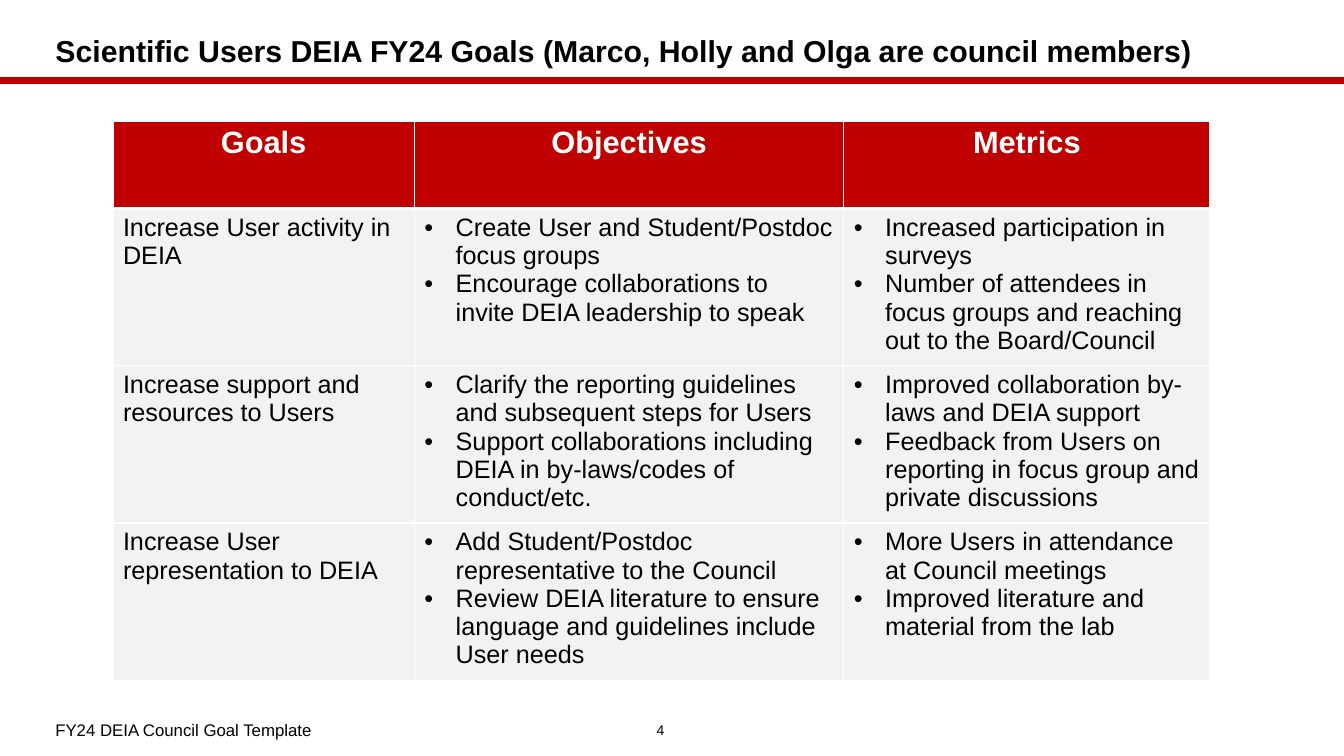
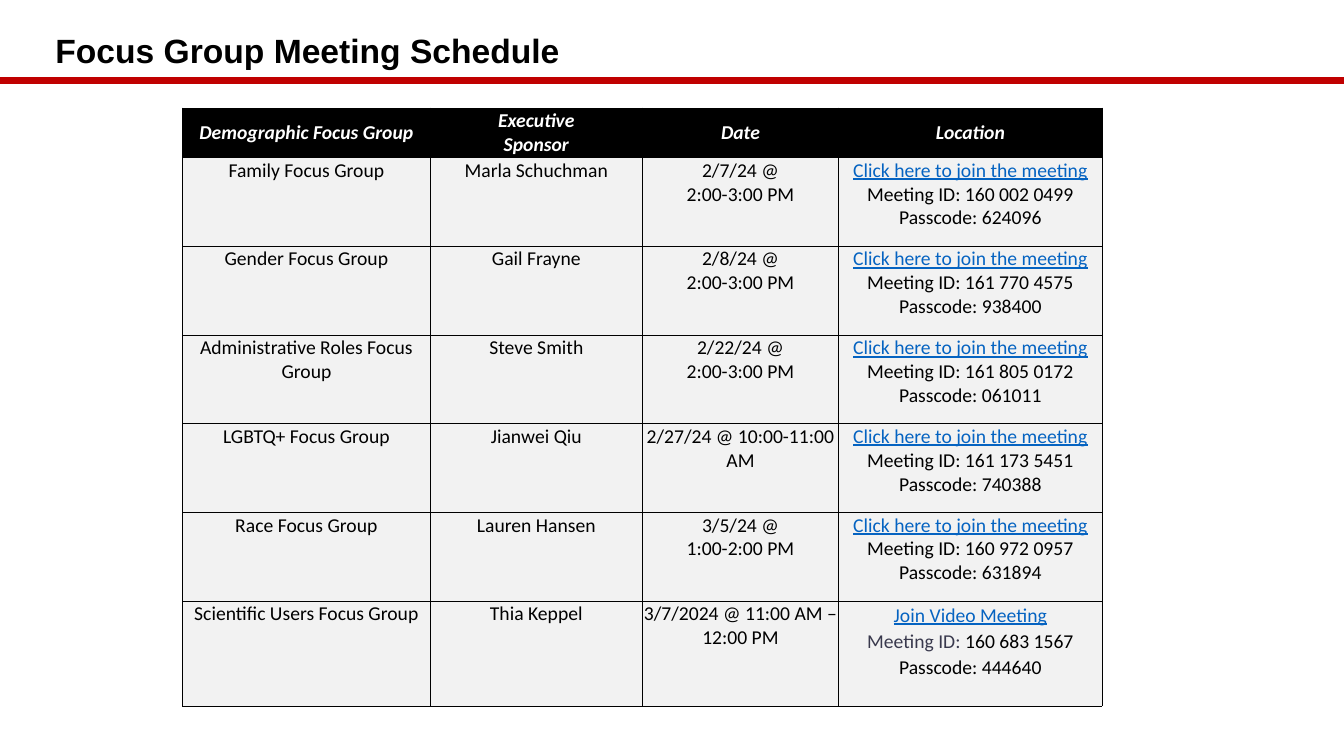
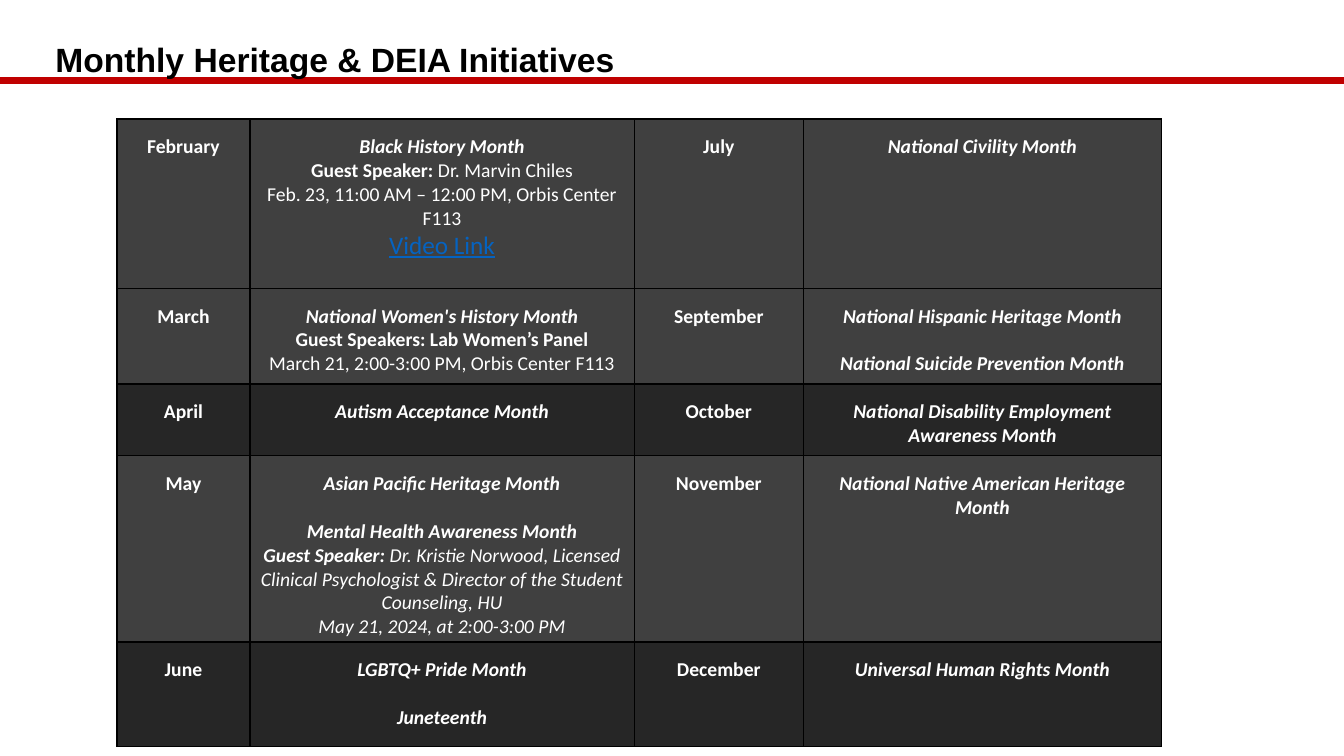
"""Build three slides on DEIA goals, focus group meetings and heritage months."""
from dataclasses import dataclass

from lxml.etree import SubElement
from pptx import Presentation
from pptx.dml.color import RGBColor
from pptx.enum.shapes import MSO_CONNECTOR as Connector
from pptx.enum.text import MSO_ANCHOR as Anchor, MSO_AUTO_SIZE as AutoSize, PP_ALIGN as Align
from pptx.oxml.ns import qn
from pptx.util import Emu, Inches, Pt


@dataclass(frozen=True)
class Theme:
    red: str = "C00000"
    black: str = "000000"
    white: str = "FFFFFF"
    pale: str = "F2F2F2"
    gray: str = "404040"
    dark: str = "262626"
    slate: str = "39394D"
    link: str = "0563C1"
    heading_font: str = "Arial"
    table_font: str = "Calibri"
    title: float = 24
    long_title: float = 21.6
    header: float = 22
    body: float = 18
    table: float = 14
    footer: float = 12
    number: float = 10


THEME = Theme()
WIDTH, HEIGHT = 13.33, 7.5
LINK = {"color": THEME.link, "underline": True}
BOLD = {"bold": True}
HERITAGE = {"bold": True, "italic": True}
ITALIC = {"italic": True}
SPACED = {**HERITAGE, "before": 17}

GOALS_TITLE = "Scientific Users DEIA FY24 Goals (Marco, Holly and Olga are council members)"
GOALS_FOOTER = "FY24 DEIA Council Goal Template"
GOALS_NUMBER = "4"
GOALS = [
    [["Goals"], ["Objectives"], ["Metrics"]],
    [["Increase User activity in DEIA"],
     ["Create User and Student/Postdoc focus groups",
      "Encourage collaborations to invite DEIA leadership to speak"],
     ["Increased participation in surveys",
      "Number of attendees in focus groups and reaching out to the Board/Council"]],
    [["Increase support and resources to Users"],
     ["Clarify the reporting guidelines and subsequent steps for Users",
      "Support collaborations including DEIA in by-laws/codes of conduct/etc."],
     ["Improved collaboration by-laws and DEIA support",
      "Feedback from Users on reporting in focus group and private discussions"]],
    [["Increase User representation to DEIA"],
     ["Add Student/Postdoc representative to the Council",
      "Review DEIA literature to ensure language and guidelines include User needs"],
     ["More Users in attendance at Council meetings",
      "Improved literature and material from the lab"]],
]

SCHEDULE_TITLE = "Focus Group Meeting Schedule"
SCHEDULE_HEADER = [["Demographic Focus Group"], ["Executive", "Sponsor"], ["Date"], ["Location"]]
MEETINGS = [
    ("Family Focus Group", "Marla Schuchman", ["2/7/24 @", "2:00-3:00 PM"],
     "160 002 0499", "624096"),
    ("Gender Focus Group", "Gail Frayne", ["2/8/24 @", "2:00-3:00 PM"],
     "161 770 4575", "938400"),
    ("Administrative Roles Focus Group", "Steve Smith", ["2/22/24 @", "2:00-3:00 PM"],
     "161 805 0172", "061011"),
    ("LGBTQ+ Focus Group", "Jianwei Qiu", ["2/27/24 @ 10:00-11:00 AM"],
     "161 173 5451", "740388"),
    ("Race Focus Group", "Lauren Hansen", ["3/5/24 @", "1:00-2:00 PM"],
     "160 972 0957", "631894"),
]
USERS_MEETING = [
    ["Scientific Users Focus Group"], ["Thia Keppel"], ["3/7/2024 @ 11:00 AM – 12:00 PM"],
    [[("Join Video Meeting", LINK)],
     [("Meeting ID: ", {"color": THEME.slate}), ("160 683 1567", {})],
     "Passcode: 444640"],
]

MONTHS_TITLE = "Monthly Heritage & DEIA Initiatives"
MONTHS = [
    ("February",
     [[("Black History Month", HERITAGE)],
      [("Guest Speaker: ", BOLD), ("Dr. Marvin Chiles", {})],
      "Feb. 23, 11:00 AM – 12:00 PM, Orbis Center F113",
      [("Video Link", {**LINK, "size": THEME.body})]],
     "July", [[("National Civility Month", HERITAGE)]]),
    ("March",
     [[("National Women's History Month", HERITAGE)],
      [("Guest Speakers: Lab Women’s Panel", BOLD)],
      "March 21, 2:00-3:00 PM, Orbis Center F113"],
     "September",
     [[("National Hispanic Heritage Month", HERITAGE)],
      [("National Suicide Prevention Month", SPACED)]]),
    ("April", [[("Autism Acceptance Month", HERITAGE)]],
     "October",
     [[("National Disability Employment", HERITAGE)], [("Awareness Month", HERITAGE)]]),
    ("May",
     [[("Asian Pacific Heritage Month", HERITAGE)],
      [("Mental Health Awareness Month", SPACED)],
      [("Guest Speaker: ", HERITAGE),
       ("Dr. Kristie Norwood, Licensed Clinical Psychologist & Director of the Student "
        "Counseling, HU", ITALIC)],
      [("May 21, 2024, at 2:00-3:00 PM", ITALIC)]],
     "November", [[("National Native American Heritage Month", HERITAGE)]]),
    ("June", [[("LGBTQ+ Pride Month", HERITAGE)], [("Juneteenth", SPACED)]],
     "December", [[("Universal Human Rights Month", HERITAGE)]]),
]


def rgb(color):
    return RGBColor.from_string(color)


def add_bullet(paragraph, indent=0.31):
    properties = paragraph._p.get_or_add_pPr()
    properties.set("marL", str(Inches(indent)))
    properties.set("indent", str(-Inches(indent)))
    SubElement(properties, qn("a:buFont")).set("typeface", THEME.heading_font)
    SubElement(properties, qn("a:buChar")).set("char", "•")


def write_text(frame, paragraphs, **base):
    """Fill a frame; a paragraph is a string or a list of (text, format) runs."""
    for index, content in enumerate(paragraphs):
        paragraph = frame.paragraphs[0] if index == 0 else frame.add_paragraph()
        runs = [(content, {})] if isinstance(content, str) else content
        layout = {**base, **runs[0][1]}
        if layout.get("bullet"):
            add_bullet(paragraph)
        paragraph.alignment = layout.get("align", Align.LEFT)
        if "spacing" in layout:
            paragraph.line_spacing = layout["spacing"]
        if "before" in layout:
            paragraph.space_before = Pt(layout["before"])
        for text, changes in runs:
            style = {**base, **changes}
            run = paragraph.add_run()
            run.text = text
            run.font.name = style["font"]
            run.font.size = Pt(style["size"])
            run.font.color.rgb = rgb(style.get("color", THEME.black))
            run.font.bold = style.get("bold", False)
            run.font.italic = style.get("italic", False)
            run.font.underline = style.get("underline", False)


def set_borders(cell, color, widths):
    properties = cell._tc.get_or_add_tcPr()
    for side, width in zip("LRTB", widths):
        line = SubElement(properties, qn(f"a:ln{side}"), w=str(Pt(width)))
        SubElement(SubElement(line, qn("a:solidFill")), qn("a:srgbClr"), val=color)


def add_table(slide, left, top, widths, heights, rows, cell_style, header=True):
    """Add a table whose cells are formatted by cell_style(row, column)."""
    table = slide.shapes.add_table(
        len(rows), len(widths), Inches(left), Inches(top),
        Inches(sum(widths)), Inches(sum(heights))).table
    table.first_row, table.horz_banding = header, False
    for column, width in zip(table.columns, widths):
        column.width = Inches(width)
    for row, height in zip(table.rows, heights):
        row.height = Inches(height)
    for row_index, row in enumerate(rows):
        for column_index, paragraphs in enumerate(row):
            cell = table.cell(row_index, column_index)
            style = cell_style(row_index, column_index)
            set_borders(cell, *style["borders"])
            cell.fill.solid()
            cell.fill.fore_color.rgb = rgb(style["fill"])
            cell.vertical_anchor = style.get("anchor", Anchor.TOP)
            margins = style.get("margins", (0.1, 0.05, 0.1, 0.05))
            (cell.margin_left, cell.margin_top,
             cell.margin_right, cell.margin_bottom) = map(Inches, margins)
            write_text(cell.text_frame, paragraphs, **style["text"])


def goals_style(row, column):
    is_header = row == 0
    text = {"font": THEME.heading_font, "size": THEME.body, "bullet": column > 0}
    if is_header:
        text = {"font": THEME.heading_font, "size": THEME.header, "color": THEME.white,
                "bold": True, "align": Align.CENTER}
    return {"fill": THEME.red if is_header else THEME.pale, "text": text,
            "borders": (THEME.white, (1, 1, 3 if row == 1 else 1, 3 if is_header else 1))}


def schedule_style(row, column):
    is_header = row == 0
    is_users_location = row == len(MEETINGS) + 1 and column == 3
    text = {"font": THEME.table_font, "size": THEME.table, "align": Align.CENTER}
    if is_header:
        text.update(HERITAGE, color=THEME.white)
    if is_users_location:
        text["spacing"] = Pt(18.8)
    return {"fill": THEME.black if is_header else THEME.pale, "text": text,
            "anchor": Anchor.MIDDLE if is_header else Anchor.TOP,
            "margins": (0 if is_users_location else 0.01,) * 4,
            "borders": (THEME.black, (0.6,) * 4)}


def months_style(row, column):
    return {"fill": THEME.dark if row in (2, 4) else THEME.gray,
            "margins": (0.07, 0.16, 0.07, 0.03) if column < 2 else (0.16, 0.16, 0.16, 0.08),
            "text": {"font": THEME.table_font, "size": THEME.table, "color": THEME.white,
                     "align": Align.CENTER},
            "borders": (THEME.black, (1,) * 4)}


def add_rule(layout, slide):
    """Draw the red rule and move it to the shared layout."""
    rule = slide.shapes.add_connector(
        Connector.STRAIGHT, Inches(-0.02), Inches(0.8), Inches(WIDTH), Inches(0.8))
    rule.line.color.rgb = rgb(THEME.red)
    rule.line.width = Pt(4.5)
    SubElement(rule._element.spPr, qn("a:effectLst"))
    layout.shapes.element.append(rule._element)


def place(shape, left, top, width, height):
    shape.left, shape.top, shape.width, shape.height = map(Inches, (left, top, width, height))


def add_slide(presentation, layout, title, size=THEME.title, top=0.26, spacing=0.9):
    slide = presentation.slides.add_slide(layout)
    place(slide.shapes.title, 0.45, top, 12.34, 0.53)
    frame = slide.shapes.title.text_frame
    frame.auto_size = AutoSize.NONE
    frame.vertical_anchor = Anchor.MIDDLE
    write_text(frame, [title], font=THEME.heading_font, size=size, bold=True, spacing=spacing)
    return slide


def add_label(slide, text, left, width, **style):
    box = slide.shapes.add_textbox(Inches(left), Inches(7.07), Inches(width), Inches(0.34))
    box.text_frame.word_wrap = True
    box.text_frame.vertical_anchor = Anchor.MIDDLE
    write_text(box.text_frame, [text], font=THEME.heading_font, **style)


def main():
    presentation = Presentation()
    presentation.slide_width, presentation.slide_height = Inches(WIDTH), Inches(HEIGHT)
    layout = presentation.slide_layouts.get_by_name("Title Only")

    goals = add_slide(presentation, layout, GOALS_TITLE, size=THEME.long_title)
    add_rule(layout, goals)
    add_table(goals, 1.12, 1.2, [2.99, 4.26, 3.63], [0.87] + [1.56] * 3, GOALS, goals_style)
    add_label(goals, GOALS_NUMBER, 6.16, 0.78, size=THEME.number, align=Align.CENTER)
    add_label(goals, GOALS_FOOTER, 0.45, 5.71, size=THEME.footer)

    schedule = add_slide(presentation, layout, SCHEDULE_TITLE)
    meetings = [
        [[group], [sponsor], date,
         [[("Click here to join the meeting", LINK)],
          f"Meeting ID: {meeting}", f"Passcode: {passcode}"]]
        for group, sponsor, date, meeting, passcode in MEETINGS]
    add_table(schedule, 1.81, 1.07, [2.46, 2.1, 1.95, 2.61],
              [0.48] + [0.88] * len(meetings) + [1.04],
              [SCHEDULE_HEADER, *meetings, USERS_MEETING], schedule_style)

    heritage = add_slide(presentation, layout, MONTHS_TITLE, top=0.32, spacing=1.0)
    months = [[[[(first, BOLD)]], events, [[(second, BOLD)]], later_events]
              for first, events, second, later_events in MONTHS]
    add_table(heritage, 1.16, 1.18, [1.32, 3.81, 1.68, 3.55], [1.68, 0.94, 0.71, 1.84, 1.04],
              months, months_style, header=False)

    presentation.save("out.pptx")


if __name__ == "__main__":
    main()
